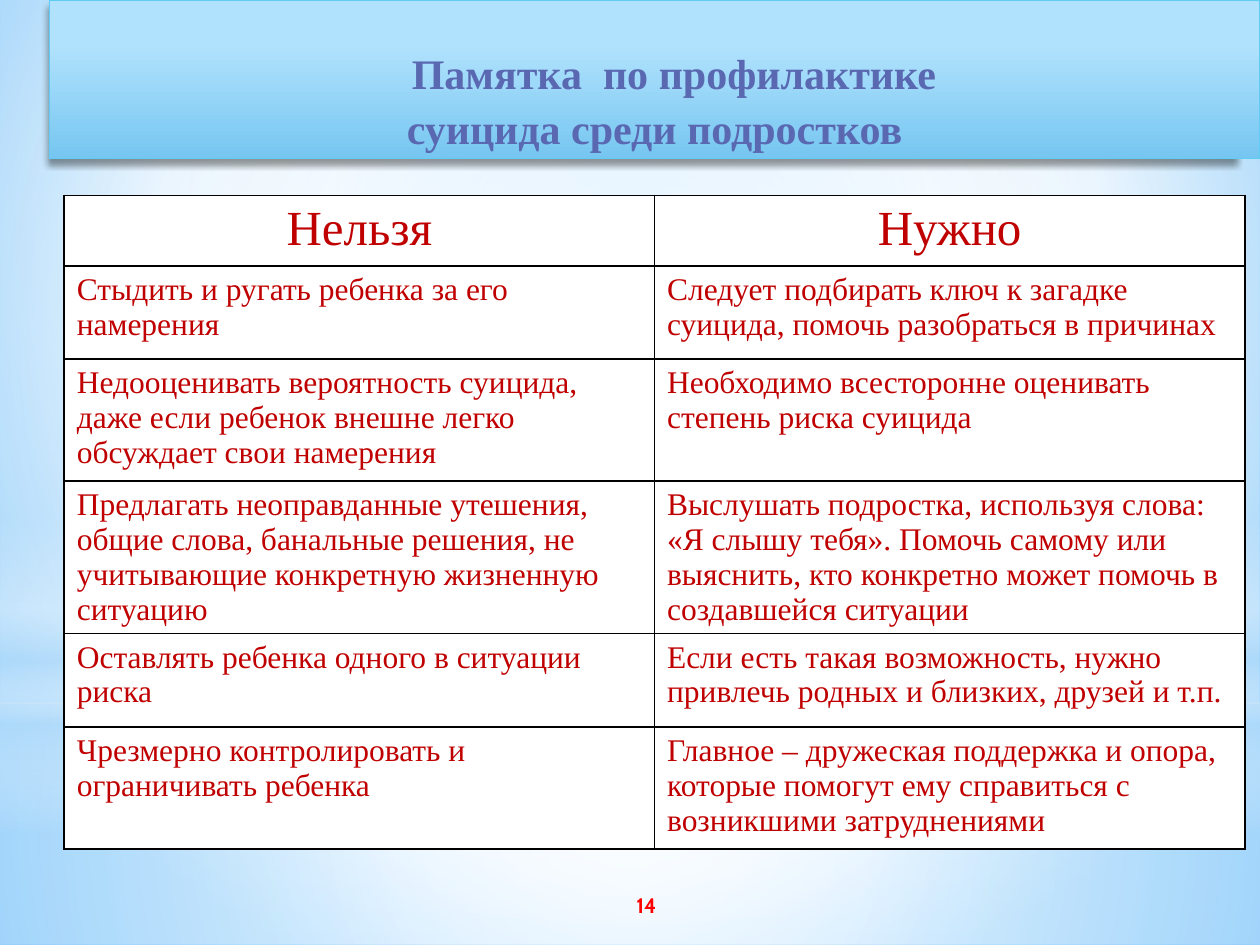
from dataclasses import dataclass
from typing import Any, Optional

import pptx
import pptx.dml.color
import pptx.enum.shapes
import pptx.enum.text
import pptx.oxml
import pptx.oxml.ns
import pptx.util

Inches = pptx.util.Inches
Pt = pptx.util.Pt
RGBColor = pptx.dml.color.RGBColor
MSO_SHAPE = pptx.enum.shapes.MSO_SHAPE
MSO_ANCHOR = pptx.enum.text.MSO_ANCHOR
PP_ALIGN = pptx.enum.text.PP_ALIGN
qn = pptx.oxml.ns.qn

WHITE = RGBColor(0xFF, 0xFF, 0xFF)
BLACK = RGBColor(0, 0, 0)
PALE = RGBColor(0xB4, 0xDC, 0xFA)
SKY = RGBColor(0x9E, 0xD5, 0xFF)
BLUE = RGBColor(0x5B, 0xB9, 0xFF)
BANNER_TOP = RGBColor(0xB1, 0xE2, 0xFD)
BANNER_END = RGBColor(0x76, 0xC6, 0xF1)
BANNER_LINE = RGBColor(0x5E, 0xCC, 0xF3)
TITLE_COLOR = RGBColor(0x59, 0x68, 0xB0)
DARK_RED = RGBColor(0xC0, 0, 0)
RED = RGBColor(0xFF, 0, 0)
SERIF = "Times New Roman"
NS = pptx.oxml.ns.nsdecls("a")

TITLE_FONT = {"name": SERIF, "size": Pt(24), "bold": True}
HEAD_FONT = {"name": SERIF, "size": Pt(28), "bold": False}
CELL_FONT = {"name": SERIF, "size": Pt(18), "bold": False}
NUMBER_FONT = {"name": "Cabin", "size": Pt(12), "bold": True}


@dataclass
class Gradient:
    stops: list[tuple[int, RGBColor, int]]  # position %, colour, opacity %
    center: Optional[tuple[int, int, int, int]] = None  # None: top to bottom


@dataclass
class Layer:
    kind: Any
    top: float
    height: float
    gradient: Gradient


MIDDLE = (50, 50, 50, 50)
BACKGROUND = Gradient([(0, SKY, 100), (60, WHITE, 100), (100, BLUE, 100)],
                      (20, 10, 20, 60))
BANNER = Gradient([(28, BANNER_TOP, 100), (100, BANNER_END, 100)])
LAYERS = [
    Layer(MSO_SHAPE.RECTANGLE, 5.58, 1.92, Gradient(
        [(0, WHITE, 91), (37, WHITE, 76), (100, PALE, 79)], MIDDLE)),
    Layer(MSO_SHAPE.RECTANGLE, 0, 5.58, Gradient(
        [(0, WHITE, 89), (48, WHITE, 62), (100, PALE, 79)], MIDDLE)),
    Layer(MSO_SHAPE.RECTANGLE, 4.12, 2.5, Gradient(
        [(0, WHITE, 0), (29, WHITE, 30), (45, PALE, 40),
         (55, WHITE, 26), (65, PALE, 60), (100, WHITE, 0)])),
    Layer(MSO_SHAPE.OVAL, 1.75, 5.58, Gradient(
        [(0, WHITE, 100), (56, WHITE, 0)], MIDDLE)),
]

ROW_HEIGHTS = [0.56, 0.74, 0.97, 1.21, 0.74, 0.97]
ROWS = [
    ("Нельзя", "Нужно"),
    ("Стыдить и ругать ребенка за его  намерения",
     "Следует подбирать ключ к загадке суицида, помочь разобраться в причинах"),
    ("Недооценивать вероятность суицида, даже если ребенок внешне легко "
     "обсуждает свои намерения",
     "Необходимо всесторонне оценивать степень риска суицида"),
    ("Предлагать неоправданные утешения, общие слова, банальные решения, "
     "не учитывающие конкретную жизненную ситуацию",
     "Выслушать подростка, используя слова: «Я слышу тебя». Помочь самому "
     "или выяснить, кто конкретно может помочь в создавшейся ситуации"),
    ("Оставлять ребенка одного в ситуации риска",
     "Если есть такая возможность, нужно привлечь родных и близких, "
     "друзей и т.п."),
    ("Чрезмерно контролировать и ограничивать ребенка",
     "Главное – дружеская поддержка и опора, которые помогут ему справиться "
     "с возникшими затруднениями"),
]


def set_gradient(fill: Any, parent: Any, gradient: Gradient) -> None:
    stops = "".join(
        f'<a:gs pos="{pos * 1000}"><a:srgbClr val="{color}">'
        f'<a:alpha val="{alpha * 1000}"/></a:srgbClr></a:gs>'
        for pos, color, alpha in gradient.stops)
    if gradient.center:
        sides = " ".join(f'{side}="{value * 1000}"'
                         for side, value in zip("ltrb", gradient.center))
        shade = f'<a:path path="circle"><a:fillToRect {sides}/></a:path>'
    else:
        shade = '<a:lin ang="5400000" scaled="0"/>'
    fill.solid()
    parent.replace(parent.find(qn("a:solidFill")), pptx.oxml.parse_xml(
        f'<a:gradFill {NS} rotWithShape="1"><a:gsLst>{stops}</a:gsLst>'
        f'{shade}</a:gradFill>'))


def add_run(p: Any, text: str, font: dict[str, Any], color: RGBColor) -> None:
    r = p.add_run()
    r.text = text
    for name, value in font.items():
        setattr(r.font, name, value)
    r.font.color.rgb = color


def add_layer(slide: Any, layer: Layer) -> None:
    sp = slide.shapes.add_shape(layer.kind, 0, Inches(layer.top),
                                Inches(10), Inches(layer.height))
    sp.shadow.inherit = False
    sp.line.fill.background()
    set_gradient(sp.fill, sp._element.spPr, layer.gradient)


def format_title(slide: Any) -> None:
    sp = slide.shapes.title
    slide.shapes._spTree.append(sp._element)  # in front of the layers
    box = {"left": 0.39, "top": 0, "width": 9.61, "height": 1.26}
    for name, value in box.items():
        setattr(sp, name, Inches(value))
    set_gradient(sp.fill, sp._element.spPr, BANNER)
    sp.line.color.rgb = BANNER_LINE
    sp.line.width = Pt(0.75)
    sp._element.spPr.append(pptx.oxml.parse_xml(
        f'<a:effectLst {NS}><a:outerShdw blurRad="50800" dist="50800" '
        'dir="5400000" sx="98000" sy="98000" rotWithShape="0">'
        '<a:srgbClr val="000000"><a:alpha val="40000"/></a:srgbClr>'
        '</a:outerShdw></a:effectLst>'))
    tf = sp.text_frame
    tf.word_wrap = True
    tf.auto_size = pptx.enum.text.MSO_AUTO_SIZE.NONE
    tf.vertical_anchor = MSO_ANCHOR.BOTTOM
    p = tf.paragraphs[0]
    p.alignment = PP_ALIGN.CENTER
    p.line_spacing = 1.08
    p._p.get_or_add_pPr().set("indent", str(Inches(0.39)))
    add_run(p, "Памятка  по профилактике ", TITLE_FONT, TITLE_COLOR)
    p.add_line_break()
    add_run(p, "суицида среди подростков", TITLE_FONT, TITLE_COLOR)


def format_cell(cell: Any, text: str, is_head: bool) -> None:
    p = cell.text_frame.paragraphs[0]
    p.alignment = PP_ALIGN.CENTER if is_head else PP_ALIGN.LEFT
    add_run(p, text, HEAD_FONT if is_head else CELL_FONT, DARK_RED)
    tcPr = cell._tc.get_or_add_tcPr()
    for side in ("lnL", "lnR", "lnT", "lnB"):
        tcPr.append(pptx.oxml.parse_xml(
            f'<a:{side} {NS} w="{Pt(1)}"><a:solidFill>'
            f'<a:srgbClr val="{BLACK}"/></a:solidFill></a:{side}>'))
    cell.fill.solid()
    cell.fill.fore_color.rgb = WHITE


def add_advice_table(slide: Any) -> None:
    table = slide.shapes.add_table(
        len(ROWS), 2, Inches(0.51), Inches(1.55),
        Inches(9.37), Inches(sum(ROW_HEIGHTS))).table
    for i, (height, texts) in enumerate(zip(ROW_HEIGHTS, ROWS)):
        table.rows[i].height = Inches(height)
        for j, text in enumerate(texts):
            format_cell(table.cell(i, j), text, i == 0)


def add_page_number(slide: Any, number: str) -> None:
    sp = slide.shapes.add_textbox(Inches(4.13), Inches(6.98),
                                  Inches(2), Inches(0.4))
    tf = sp.text_frame
    tf.word_wrap = True
    tf.vertical_anchor = MSO_ANCHOR.MIDDLE
    p = tf.paragraphs[0]
    p.alignment = PP_ALIGN.CENTER
    add_run(p, number, NUMBER_FONT, RED)


def main() -> None:
    prs = pptx.Presentation()
    prs.slide_width, prs.slide_height = Inches(10), Inches(7.5)
    slide = prs.slides.add_slide(prs.slide_layouts[5])

    # Background and its soft light layers
    fill = slide.background.fill
    fill.solid()
    set_gradient(fill, next(slide._element.iter(qn("p:bgPr"))), BACKGROUND)
    for layer in LAYERS:
        add_layer(slide, layer)

    # Content
    format_title(slide)
    add_advice_table(slide)
    add_page_number(slide, "14")
    prs.save("out.pptx")


if __name__ == "__main__":
    main()
